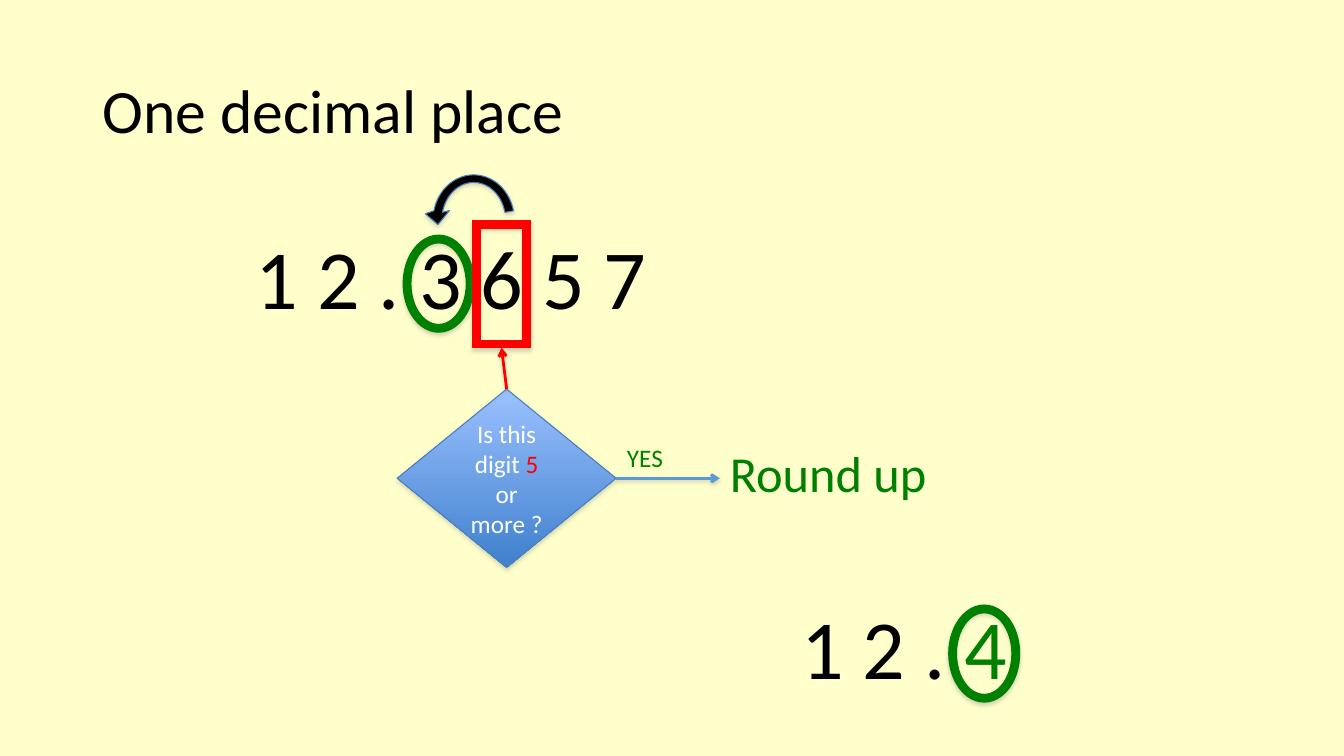
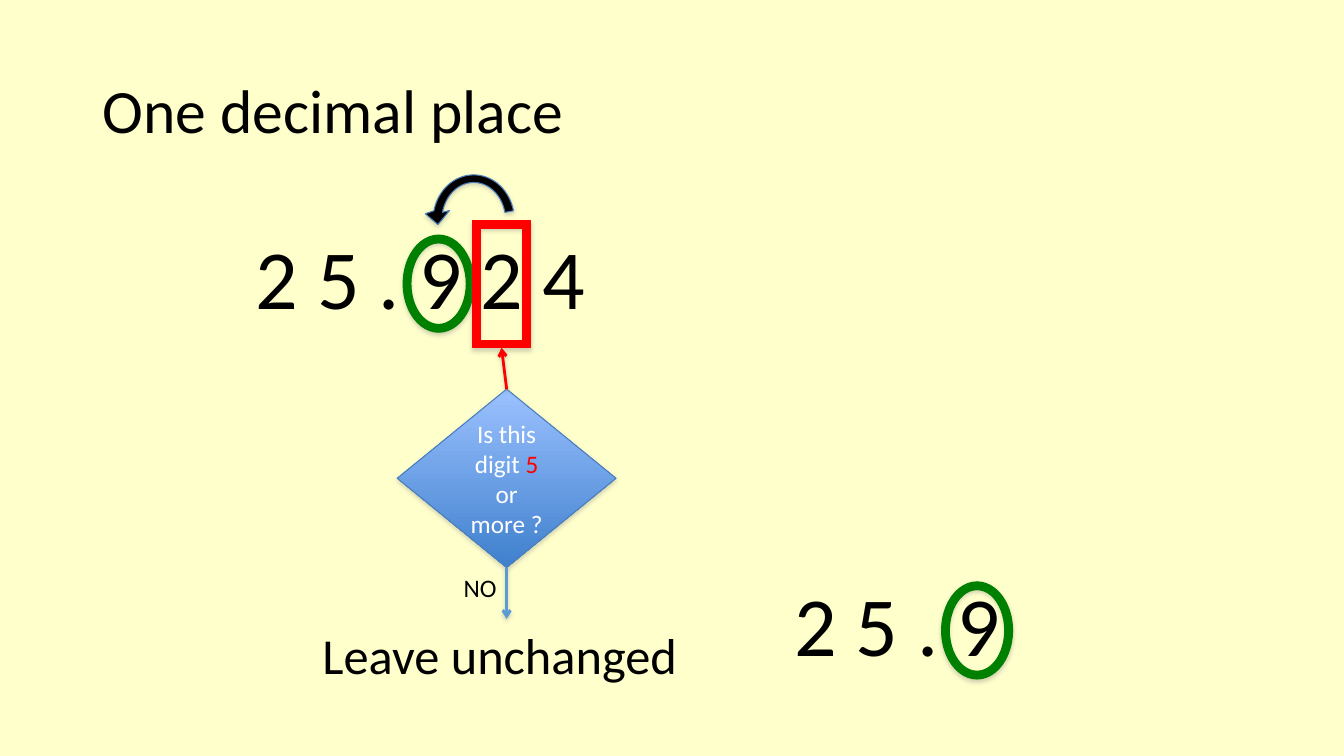
from dataclasses import dataclass
from math import cos, radians, sin

from lxml import etree
from pptx import Presentation
from pptx import util as u
from pptx.dml.color import RGBColor
from pptx.enum import shapes, text
from pptx.oxml import ns

COLORS = {
    "paper": "FFFFCC", "ink": "000000", "white": "FFFFFF", "green": "008000",
    "red": "FF0000", "outline": "4A7EBB", "arrow": "5B9BD5",
    "light": "9BC1FF", "deep": "3F80CD", "shadow": "808080",
}
FONT = "Calibri"
WIDTH, HEIGHT = u.Inches(13.33), u.Inches(7.5)
COLUMN, ROW = WIDTH / 100, HEIGHT / 100


@dataclass
class Box:
    """A rectangle counted in columns and rows of a 100 by 100 grid."""
    left: float
    top: float
    width: float = 0
    height: float = 0

    def inside(self, column, row, width=0, height=0):
        """Return a box placed from this box's top left corner."""
        return Box(self.left + column, self.top + row, width, height)

    def point(self, across=0, down=0):
        """Return the position at the given shares of this box."""
        return (round((self.left + across * self.width) * COLUMN),
                round((self.top + down * self.height) * ROW))

    def frame(self):
        """Return left, top, width and height as slide lengths."""
        return (*self.point(), round(self.width * COLUMN), round(self.height * ROW))


TITLE = Box(6.9, 5.33, 86.27, 19.33)
NUMBER = Box(18.3, 29.2, 31.66, 14.8)
DECISION = Box(29.56, 51.47, 16.28, 23.6)
YES = {"label": "YES", "answer": "Round up", "color": "green", "site": 3,
       "label_at": (16.35, 6.4, 5.48, 5.33), "answer_at": (24, 6.4, 17.25, 9.47),
       "arrow_to": (24, 11.8)}
NO = {"label": "NO", "answer": "Leave unchanged", "color": "ink", "site": 2,
      "label_at": (4.2, 23.6, 5.1, 5.33), "answer_at": (-6.3, 30.4, 30.16, 9.47),
      "arrow_to": (8.14, 30.4)}


def rgb(name):
    """Look up a named colour."""
    return RGBColor.from_string(COLORS[name])


def write(frame, parts, size):
    """Fill the first paragraph with (text, colour) parts."""
    paragraph = frame.paragraphs[0]
    for words, color in parts:
        run = paragraph.add_run()
        run.text = words
        run.font.size, run.font.name = u.Pt(size), FONT
        run.font.color.rgb = rgb(color)
    return paragraph


def add_text(slide, box, parts, size):
    """Add a wrapped text box."""
    frame = slide.shapes.add_textbox(*box.frame()).text_frame
    frame.word_wrap = True
    write(frame, parts, size)


def add_shadow(shape, opacity, distance):
    """Give a shape or connector a soft shadow below it."""
    properties = shape.element.spPr
    effects = properties.find(ns.qn("a:effectLst"))
    if effects is None:
        effects = etree.SubElement(properties, ns.qn("a:effectLst"))
    outer = etree.SubElement(effects, ns.qn("a:outerShdw"), blurRad=str(u.Pt(3.1)),
                             dist=str(u.Pt(distance)), dir="5400000", rotWithShape="0")
    color = etree.SubElement(outer, ns.qn("a:srgbClr"), val=COLORS["shadow"])
    etree.SubElement(color, ns.qn("a:alpha"), val=str(opacity * 1000))


def finish(shape, fill, line):
    """Set outline, shadow and, when named, a solid fill."""
    if fill:
        shape.fill.solid()
        shape.fill.fore_color.rgb = rgb(fill)
    shape.line.color.rgb = rgb(line)
    shape.line.width = u.Pt(0.75)
    shape.shadow.inherit = False
    add_shadow(shape, 35, 1.8)


def add_outline(slide, box, kind, thickness, color):
    """Add a hollow ring or frame."""
    shape = slide.shapes.add_shape(kind, *box.frame())
    shape.adjustments[0] = thickness
    finish(shape, color, color)
    return shape


def add_arrow(slide, color, source, site, end, target=None):
    """Draw an arrow from a connection site to a point or a shape's foot."""
    connector = slide.shapes.add_connector(shapes.MSO_CONNECTOR.STRAIGHT, 0, 0, *end)
    connector.begin_connect(source, site)
    if target is not None:
        connector.end_connect(target, 2)
    connector.line.color.rgb = rgb(color)
    connector.line.width = u.Pt(2)
    line = connector.element.spPr.find(ns.qn("a:ln"))
    etree.SubElement(line, ns.qn("a:tailEnd"), type="arrow")
    add_shadow(connector, 38, 1.6)


def add_title(slide, words):
    """Place and format the title placeholder."""
    title = slide.shapes.title
    title.left, title.top, title.width, title.height = TITLE.frame()
    title.text_frame.vertical_anchor = text.MSO_ANCHOR.MIDDLE
    paragraph = write(title.text_frame, [(words, "ink")], 44)
    paragraph.alignment = text.PP_ALIGN.LEFT
    paragraph.line_spacing = 0.9


def add_ringed_number(slide, box, parts):
    """Write a number and ring its first decimal."""
    add_text(slide, box, parts, 60)
    add_outline(slide, box.inside(11.7, 1.9, 5.28, 12.85),
                shapes.MSO_SHAPE.DONUT, 0.11, "green")


def add_curved_arrow(slide, box):
    """Draw an arched arrow that points back to the left."""
    def arc(across, down, angles):
        return [box.point(0.5 + across * cos(radians(angle)),
                          0.5 - down * sin(radians(angle))) for angle in angles]

    angles = range(12, 170, 4)
    head = [box.point(*corner) for corner in ((0, 0.44), (0.13, 0.54), (0.25, 0.41))]
    points = arc(0.42, 0.42, angles) + head + arc(0.33, 0.35, reversed(angles))
    builder = slide.shapes.build_freeform(*points[0])
    builder.add_line_segments(points[1:], close=True)
    finish(builder.convert_to_shape(), "ink", "outline")


def add_question(slide, box, number):
    """Mark the digits that decide the rounding and return the frame."""
    add_ringed_number(slide, box, [(number, "ink")])
    digit = add_outline(slide, box.inside(16.88, 0, 4.28, 16.8),
                        shapes.MSO_SHAPE.FRAME, 0.13, "red")
    add_curved_arrow(slide, box.inside(13.35, -7.2, 7.2, 14.27))
    return digit


def add_decision(slide, box, digit, outcome):
    """Add the test, its link to the digit and its outcome."""
    diamond = slide.shapes.add_shape(shapes.MSO_SHAPE.FLOWCHART_DECISION, *box.frame())
    diamond.fill.gradient()
    diamond.fill.gradient_angle = 270
    for stop, color in zip(diamond.fill.gradient_stops, ("light", "deep")):
        stop.color.rgb = rgb(color)
    finish(diamond, None, "outline")
    frame = diamond.text_frame
    frame.word_wrap = True
    frame.vertical_anchor = text.MSO_ANCHOR.MIDDLE
    parts = [("Is this digit ", "white"), ("5", "red"), (" or more ?", "white")]
    write(frame, parts, 18).alignment = text.PP_ALIGN.CENTER
    add_arrow(slide, "red", diamond, 0, (0, 0), digit)
    add_arrow(slide, "arrow", diamond, outcome["site"],
              box.inside(*outcome["arrow_to"]).point())
    for part, size in (("answer", 36), ("label", 18)):
        add_text(slide, box.inside(*outcome[part + "_at"]),
                 [(outcome[part], outcome["color"])], size)


def add_rounding_slide(presentation, number, outcome, result, result_box):
    """Build one worked example."""
    slide = presentation.slides.add_slide(presentation.slide_layouts[5])
    add_title(slide, "One decimal place")
    digit = add_question(slide, NUMBER, number)
    add_decision(slide, DECISION, digit, outcome)
    add_ringed_number(slide, result_box, result)


def main():
    """Build and save the presentation."""
    presentation = Presentation()
    presentation.slide_width, presentation.slide_height = WIDTH, HEIGHT
    background = presentation.slide_master.background.fill
    background.solid()
    background.fore_color.rgb = rgb("paper")
    add_rounding_slide(presentation, "1 2 . 3 6 5 7", YES,
                       [("1 2 . ", "ink"), ("4", "green")], Box(58.89, 78.13, 24.91, 14.8))
    add_rounding_slide(presentation, "2 5 . 9 2 4", NO,
                       [("2 5 . 9", "ink")], Box(58.36, 75.07, 24.91, 14.8))
    presentation.save("out.pptx")


if __name__ == "__main__":
    main()
